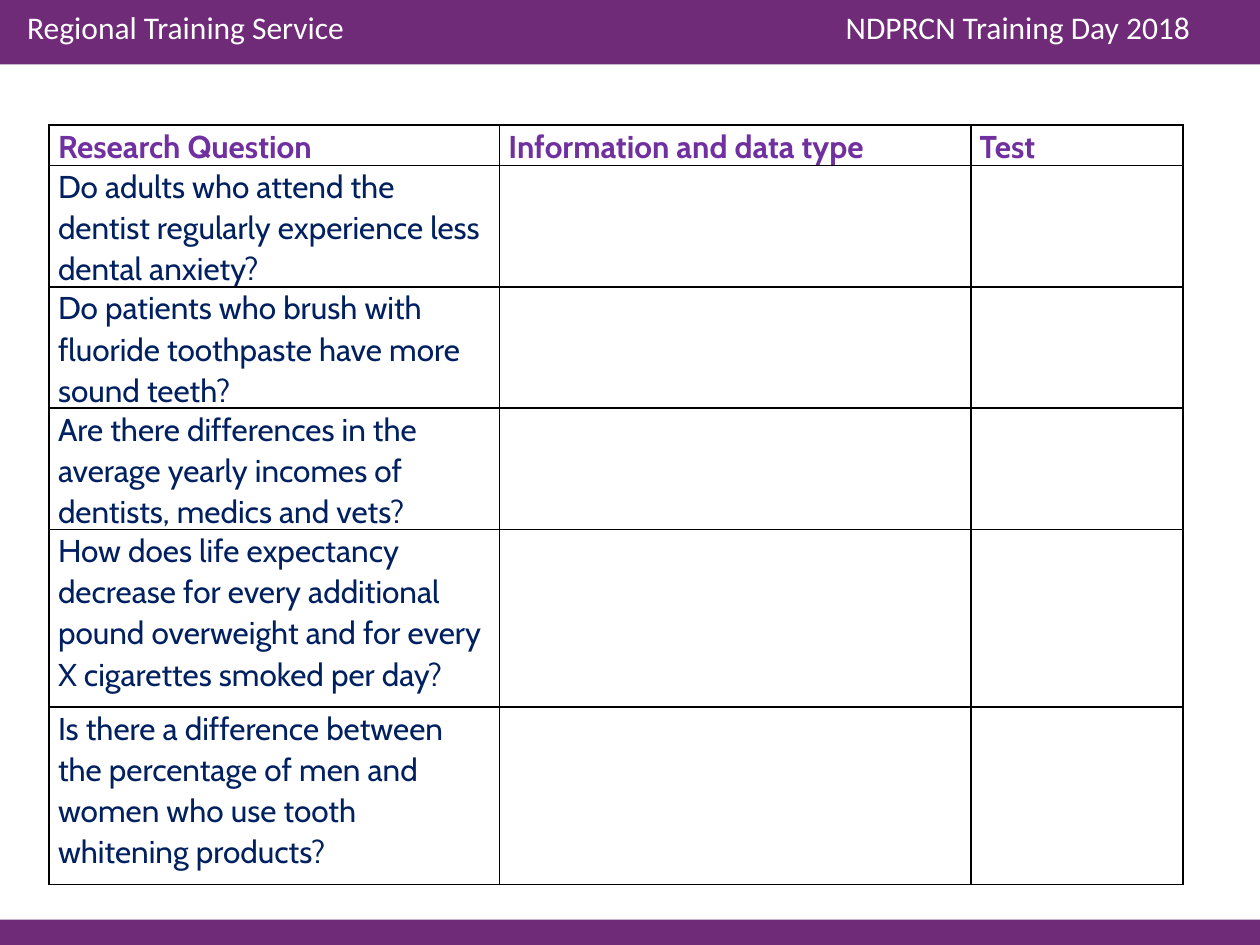
from dataclasses import dataclass

from lxml import etree
from pptx import Presentation
from pptx.dml.color import RGBColor
from pptx.enum.shapes import MSO_SHAPE
from pptx.oxml.ns import qn
from pptx.util import Cm, Pt

RECTANGLE = MSO_SHAPE.RECTANGLE


@dataclass(frozen=True)
class Theme:
    band: str = "6F2A78"
    band_text: str = "FFFFFF"
    heading: str = "7030A0"
    question: str = "002060"
    border: str = "000000"
    band_font: str = "Calibri"
    table_font: str = "Cabin"
    size: int = 18
    border_width: int = 1
    line_spacing: float = 1.07


THEME = Theme()
SLIDE_WIDTH, SLIDE_HEIGHT = Cm(25.4), Cm(19.05)
TABLE_LEFT = Cm(0.99)
COLUMN_WIDTHS = (Cm(9.08), Cm(9.5), Cm(4.28))
HEADING_HEIGHT, SHORT_ROW, TALL_ROW = Cm(0.71), Cm(2.13), Cm(3.58)

HEADINGS = ("Research Question", "Information and data type", "Test")
SHORT_QUESTIONS = (
    "Do adults who attend the dentist regularly experience less dental anxiety?",
    "Do patients who brush with fluoride toothpaste have more sound teeth?",
    "Are there differences in the average yearly incomes of dentists, medics and vets?",
)
SMOKING_QUESTION = (
    "How does life expectancy decrease for every additional pound overweight "
    "and for every X cigarettes smoked per day?"
)
WHITENING_QUESTION = (
    "Is there a difference between the percentage of men and women "
    "who use tooth whitening products?"
)


def add_run(paragraph, text, font_name, color, bold=False):
    run = paragraph.add_run()
    run.text = text
    run.font.name = font_name
    run.font.size = Pt(THEME.size)
    run.font.bold = bold
    run.font.color.rgb = RGBColor.from_string(color)


def add_band(slide, top, height):
    band = slide.shapes.add_shape(RECTANGLE, 0, top, SLIDE_WIDTH, height)
    band.shadow.inherit = False
    band.fill.solid()
    band.fill.fore_color.rgb = RGBColor.from_string(THEME.band)
    band.line.fill.background()


def add_header_text(slide, left_text, right_text):
    """Write both header texts on one line, parted by a tab stop."""
    box = slide.shapes.add_textbox(Cm(0.3), Cm(0.03), Cm(24.82), Cm(1.02))
    box.text_frame.word_wrap = True
    paragraph = box.text_frame.paragraphs[0]
    tab_list = etree.SubElement(paragraph._p.get_or_add_pPr(), qn("a:tabLst"))
    etree.SubElement(tab_list, qn("a:tab"), pos=str(Cm(16.5)), algn="l")
    add_run(paragraph, f"{left_text}\t{right_text}", THEME.band_font, THEME.band_text)


def add_borders(cell):
    properties = cell._tc.get_or_add_tcPr()
    for side in ("lnL", "lnR", "lnT", "lnB"):
        line = etree.SubElement(properties, qn(f"a:{side}"), w=str(Pt(THEME.border_width)))
        fill = etree.SubElement(line, qn("a:solidFill"))
        etree.SubElement(fill, qn("a:srgbClr"), val=THEME.border)


def format_cell(cell):
    add_borders(cell)
    cell.fill.background()
    cell.margin_left = cell.margin_right = Cm(0.18)
    cell.margin_top = cell.margin_bottom = 0


def add_cell_text(cell, text, color, bold=False):
    paragraph = cell.text_frame.paragraphs[0]
    paragraph.line_spacing = THEME.line_spacing
    add_run(paragraph, text, THEME.table_font, color, bold)


def add_question_table(slide, top, height, questions, row_heights, headings=()):
    """Add a table with questions in its first column and the rest left to fill in."""
    frame = slide.shapes.add_table(
        len(row_heights), len(COLUMN_WIDTHS), TABLE_LEFT, top, sum(COLUMN_WIDTHS), height
    )
    table = frame.table
    table.first_row = table.horz_banding = False
    for column, width in zip(table.columns, COLUMN_WIDTHS):
        column.width = width
    for row, row_height in zip(table.rows, row_heights):
        row.height = row_height
    frame.height = height
    for cell in table.iter_cells():
        format_cell(cell)
    for index, heading in enumerate(headings):
        add_cell_text(table.cell(0, index), heading, THEME.heading, bold=True)
    for index, question in enumerate(questions, start=1 if headings else 0):
        add_cell_text(table.cell(index, 0), question, THEME.question)


def main():
    presentation = Presentation()
    presentation.slide_width, presentation.slide_height = SLIDE_WIDTH, SLIDE_HEIGHT
    slide = presentation.slides.add_slide(presentation.slide_layouts[6])

    add_band(slide, 0, Cm(1.3))
    add_band(slide, Cm(18.54), Cm(0.71))
    add_header_text(slide, "Regional Training Service", "NDPRCN Training Day 2018")

    short_rows = [SHORT_ROW] * len(SHORT_QUESTIONS)
    add_question_table(
        slide, Cm(2.52), Cm(11.73),
        (*SHORT_QUESTIONS, SMOKING_QUESTION),
        [HEADING_HEIGHT, *short_rows, TALL_ROW],
        HEADINGS,
    )
    add_question_table(slide, Cm(14.25), TALL_ROW, [WHITENING_QUESTION], [TALL_ROW])
    presentation.save("out.pptx")


if __name__ == "__main__":
    main()
